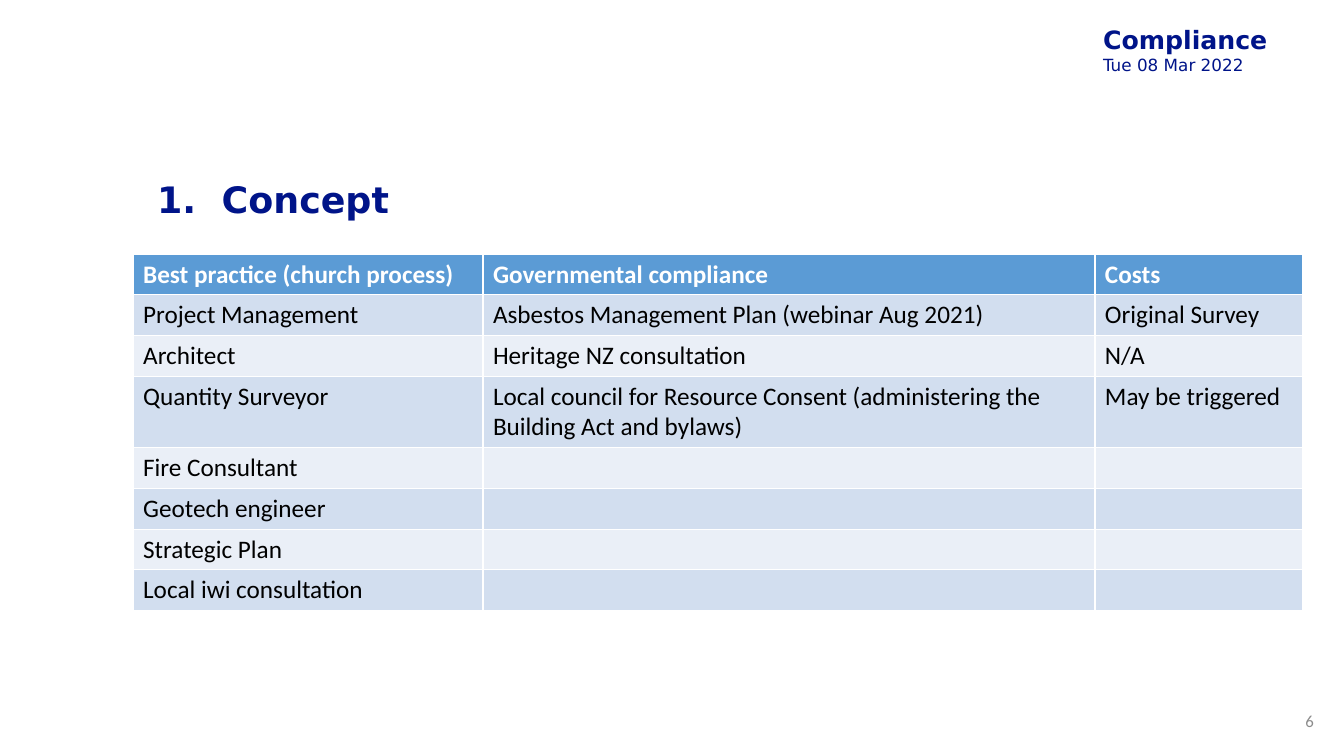
from lxml import etree
from pptx import Presentation
from pptx.dml.color import RGBColor
from pptx.enum.text import MSO_ANCHOR, PP_ALIGN
from pptx.oxml.ns import qn
from pptx.util import Inches, Pt

TOP, MIDDLE = MSO_ANCHOR.TOP, MSO_ANCHOR.MIDDLE
LEFT, RIGHT = PP_ALIGN.LEFT, PP_ALIGN.RIGHT

COLORS = {
    "navy": "001489",
    "header": "5B9BD5",
    "odd": "D2DEEF",
    "even": "EAEFF7",
    "white": "FFFFFF",
    "black": "000000",
    "gray": "8C8C8C",
}

FORMATS = {
    "topic": {"size": Pt(18), "name": "DejaVu Sans", "bold": True, "color": "navy"},
    "date": {"size": Pt(12), "name": "DejaVu Sans", "bold": False, "color": "navy"},
    "title": {"size": Pt(26), "name": "DejaVu Sans", "bold": True, "color": "navy"},
    "header": {"size": Pt(18), "name": "Calibri", "bold": True, "color": "white"},
    "body": {"size": Pt(18), "name": "Calibri", "bold": False, "color": "black"},
    "number": {"size": Pt(12), "name": "Calibri", "bold": False, "color": "gray"},
}

BANNER = [("Compliance", "topic"), ("Tue 08 Mar 2022", "date")]
TITLE = [("1.\tConcept", "title")]
PAGE_NUMBER = [("6", "number")]

STAGE_ROWS = [
    ("Best practice (church process)", "Governmental compliance", "Costs"),
    ("Project Management", "Asbestos Management Plan (webinar Aug 2021)", "Original Survey"),
    ("Architect", "Heritage NZ consultation", "N/A"),
    (
        "Quantity Surveyor",
        "Local council for Resource Consent (administering the Building Act and bylaws)",
        "May be triggered",
    ),
    ("Fire Consultant", "", ""),
    ("Geotech engineer", "", ""),
    ("Strategic Plan", "", ""),
    ("Local iwi consultation", "", ""),
]
COLUMN_WIDTHS = (3.47, 6.07, 2.06)
TABLE_LEFT, TABLE_TOP, TABLE_HEIGHT = 1.32, 2.52, 3.54
CONSENT_ROW, CONSENT_HEIGHT = 3, 0.71
TITLE_TAB = 0.64


def style(font, kind):
    for key, value in FORMATS[kind].items():
        if key == "color":
            font.color.rgb = RGBColor.from_string(COLORS[value])
        else:
            setattr(font, key, value)


def add_text(slide, lines, place, anchor=TOP, align=LEFT, wrap=True, margins=(0.1, 0.05)):
    frame = slide.shapes.add_textbox(*map(Inches, place)).text_frame
    side, edge = map(Inches, margins)
    layout = {
        "word_wrap": wrap,
        "vertical_anchor": anchor,
        "margin_left": side,
        "margin_right": side,
        "margin_top": edge,
        "margin_bottom": edge,
    }
    for key, value in layout.items():
        setattr(frame, key, value)
    for index, (words, kind) in enumerate(lines):
        paragraph = frame.add_paragraph() if index else frame.paragraphs[0]
        paragraph.alignment = align
        run = paragraph.add_run()
        run.text = words
        style(run.font, kind)
    return frame


def add_stages(slide):
    place = (TABLE_LEFT, TABLE_TOP, sum(COLUMN_WIDTHS), TABLE_HEIGHT)
    stages = slide.shapes.add_table(
        len(STAGE_ROWS), len(COLUMN_WIDTHS), *map(Inches, place)
    ).table
    for column, width in zip(stages.columns, COLUMN_WIDTHS):
        column.width = Inches(width)
    plain_height = (TABLE_HEIGHT - CONSENT_HEIGHT) / (len(STAGE_ROWS) - 1)
    for r, entries in enumerate(STAGE_ROWS):
        stages.rows[r].height = Inches(CONSENT_HEIGHT if r == CONSENT_ROW else plain_height)
        band = "header" if r == 0 else ("even", "odd")[r % 2]
        for c, entry in enumerate(entries):
            cell = stages.cell(r, c)
            cell.fill.solid()
            cell.fill.fore_color.rgb = RGBColor.from_string(COLORS[band])
            if entry:
                run = cell.text_frame.paragraphs[0].add_run()
                run.text = entry
                style(run.font, "body" if r else "header")


def main():
    """Build the Concept stage compliance slide."""
    deck = Presentation()
    deck.slide_width, deck.slide_height = Inches(13.33), Inches(7.5)
    slide = deck.slides.add_slide(deck.slide_layouts[6])
    add_text(slide, BANNER, (10.87, 0.2, 1.79, 0.88), wrap=False, margins=(0.07, 0.04))
    title = add_text(slide, TITLE, (1.46, 1.5, 11.2, 1.01), MIDDLE).paragraphs[0]
    title.line_spacing = 0.9
    tabs = etree.SubElement(title._p.get_or_add_pPr(), qn("a:tabLst"))
    etree.SubElement(tabs, qn("a:tab"), pos=str(Inches(TITLE_TAB)), algn="l")
    add_stages(slide)
    add_text(slide, PAGE_NUMBER, (12.71, 6.95, 0.42, 0.4), MIDDLE, RIGHT)
    deck.save("out.pptx")


if __name__ == "__main__":
    main()
